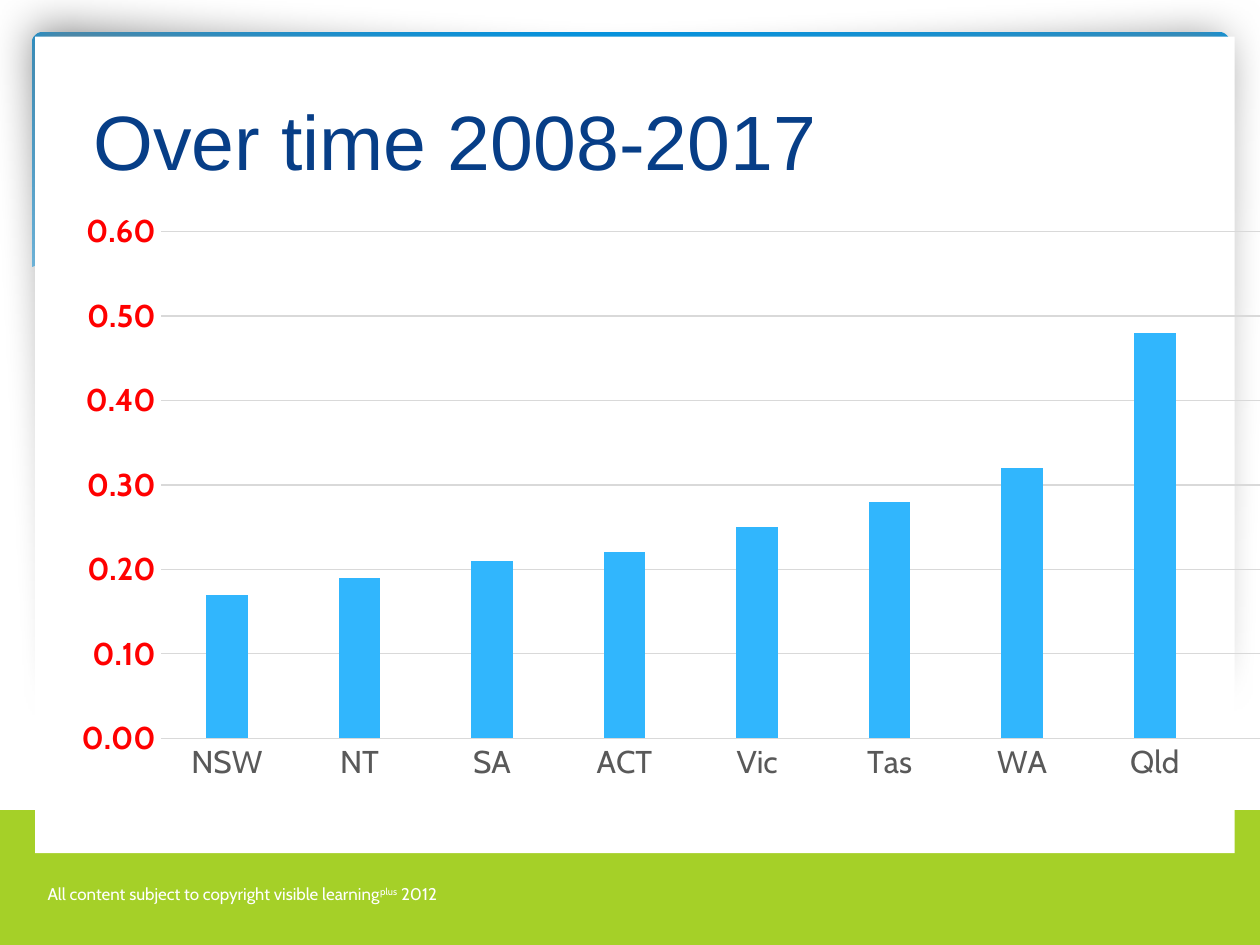
from lxml import etree
from pptx import Presentation
from pptx.chart.data import CategoryChartData
from pptx.dml.color import RGBColor
from pptx.enum.chart import XL_CHART_TYPE, XL_TICK_MARK
from pptx.enum.shapes import MSO_SHAPE
from pptx.enum.text import MSO_ANCHOR
from pptx.oxml import parse_xml
from pptx.oxml.ns import qn
from pptx.util import Cm, Pt

COLUMN = XL_CHART_TYPE.COLUMN_CLUSTERED
NO_TICK = XL_TICK_MARK.NONE
RECT = MSO_SHAPE.RECTANGLE
ROUND_RECT = MSO_SHAPE.ROUNDED_RECTANGLE
MIDDLE = MSO_ANCHOR.MIDDLE
COLORS = {
    "sky": "0293E0", "pale_sky": "83D3FE", "white": "FFFFFF",
    "green": "A5D028", "shadow": "808080", "navy": "073E87",
    "bar": "31B6FD", "grid": "D9D9D9", "label": "595959",
    "red": "FF0000", "black": "000000",
}
WAVE = [
    (24.23, 1.57), (23.04, 1.98), (21.34, 2.29), (19.96, 2.36),
    (18.31, 2.29), (16.38, 2.06), (14.12, 1.68), (10.77, 0.91),
    (8.69, 0.46), (6.83, 0.15), (4.78, 0), (2.77, 0.05),
    (1.12, 0.33), (0, 0.74), (0, 3.68), (24.23, 3.68),
]
SHADOW = [(0.81, 15.52), (0, 0), (12.73, 0.89), (25.88, 0.23),
          (25.58, 15.24), (12.14, 12.04)]
STATES = {"NSW": 0.17, "NT": 0.19, "SA": 0.21, "ACT": 0.22, "Vic": 0.25,
          "Tas": 0.28, "WA": 0.32, "Qld": 0.48, "": None}


def rgb(name):
    return RGBColor.from_string(COLORS[name])


def set_font(font, name, size, color, bold=False):
    font.name, font.size, font.bold = name, Pt(size), bold
    font.color.rgb = rgb(color)


def paint(sp, color):
    sp.fill.solid()
    sp.fill.fore_color.rgb = rgb(color)
    sp.line.fill.background()
    sp.shadow.inherit = False


def add_block(s, x, y, w, h, color, kind=RECT):
    sp = s.shapes.add_shape(kind, Cm(x), Cm(y), Cm(w), Cm(h))
    paint(sp, color)
    return sp


def add_outline(s, x, y, points, color):
    pts = [(round(px * 100), round(py * 100)) for px, py in points]
    builder = s.shapes.build_freeform(*pts[0], scale=Cm(0.01))
    builder.add_line_segments(pts[1:], close=True)
    sp = builder.convert_to_shape(Cm(x), Cm(y))
    paint(sp, color)
    return sp


def add_text(s, x, y, w, h):
    tf = s.shapes.add_textbox(Cm(x), Cm(y), Cm(w), Cm(h)).text_frame
    tf.word_wrap = True
    return tf


def add_backdrop(s, x, y, w, h):
    band = add_block(s, x + 0.64, y + 0.64, w - 1.24, 6.86, "sky", ROUND_RECT)
    band.adjustments[0] = 0.034
    band.fill.gradient()
    band.fill.gradient_angle = 270
    stops = zip(band.fill.gradient_stops, ((0, "sky"), (0.9, "pale_sky")))
    for stop, (position, color) in stops:
        stop.position = position
        stop.color.rgb = rgb(color)
    add_outline(s, x + 0.58, y + 4.67, WAVE, "white")
    add_block(s, x, y + h - 2.72, w, 2.72, "green")
    shadow = add_outline(s, x - 0.28, y - 0.41, SHADOW, "shadow")
    effects = shadow._element.spPr.find(qn("a:effectLst"))
    etree.SubElement(effects, qn("a:softEdge")).set("rad", str(Cm(0.88)))
    add_block(s, x + 0.71, y + 0.74, w - 1.22, 16.46, "white")


def add_footer(s, x, y, w, h):
    p = add_text(s, x, y, w, h).paragraphs[0]
    parts = (("All content subject to copyright visible learning", 0),
             ("plus", 30000), (" 2012", 0))
    for text, baseline in parts:
        r = p.add_run()
        r.text = text
        if baseline:
            r._r.get_or_add_rPr().set("baseline", str(baseline))
    set_font(p.font, "Cabin", 9.7, "white")


def add_title(s, x, y, w, h):
    tf = add_text(s, x, y, w, h)
    tf.vertical_anchor = MIDDLE
    p = tf.paragraphs[0]
    p.text = "Over time 2008-2017"
    set_font(p.font, "Arial", 44, "navy")


def set_plot_layout(chart, **fractions):
    plot_area = chart._chartSpace.chart.plotArea
    for old in plot_area.findall(qn("c:layout")):
        plot_area.remove(old)
    modes = {"layoutTarget": "inner", "xMode": "edge", "yMode": "edge"}
    items = "".join(f'<c:{k} val="{v}"/>' for k, v in {**modes, **fractions}.items())
    ns = "http://schemas.openxmlformats.org/drawingml/2006/chart"
    plot_area.insert(0, parse_xml(
        f'<c:layout xmlns:c="{ns}"><c:manualLayout>{items}</c:manualLayout></c:layout>'))


def add_state_chart(s, x, y, w, h):
    data = CategoryChartData(number_format="0.00")
    data.categories = list(STATES)
    data.add_series("Series 1", list(STATES.values()))
    chart = s.shapes.add_chart(COLUMN, Cm(x), Cm(y), Cm(w), Cm(h), data).chart
    chart.has_legend = False
    chart.has_title = False
    set_font(chart.font, "Cabin", 18, "black")
    set_plot_layout(chart, x=0.082, y=0.046, w=0.918, h=0.838)

    plot = chart.plots[0]
    plot.gap_width, plot.overlap = 219, -27
    plot.vary_by_categories = False
    fill = plot.series[0].format.fill
    fill.solid()
    fill.fore_color.rgb = rgb("bar")

    cat, val = chart.category_axis, chart.value_axis
    for axis in (cat, val):
        axis.major_tick_mark = axis.minor_tick_mark = NO_TICK
    set_font(cat.tick_labels.font, "Cabin", 18, "label")
    set_font(val.tick_labels.font, "Cabin", 18, "red", True)
    val.minimum_scale, val.maximum_scale, val.major_unit = 0, 0.6, 0.1
    val.tick_labels.number_format = "0.00"
    val.tick_labels.number_format_is_linked = False
    val.format.line.fill.background()
    for line in (cat.format.line, val.major_gridlines.format.line):
        line.color.rgb = rgb("grid")
        line.width = Pt(0.75)


def main():
    prs = Presentation()
    prs.slide_width, prs.slide_height = Cm(25.4), Cm(19.05)
    s = prs.slides.add_slide(prs.slide_layouts[6])
    add_backdrop(s, 0, 0, 25.4, 19.05)
    add_footer(s, 0.71, 17.68, 14.4, 0.66)
    add_title(s, 1.63, 1.52, 18.8, 2.59)
    add_state_chart(s, 1.09, 4.11, 26.21, 12.19)
    prs.save("out.pptx")


if __name__ == "__main__":
    main()
